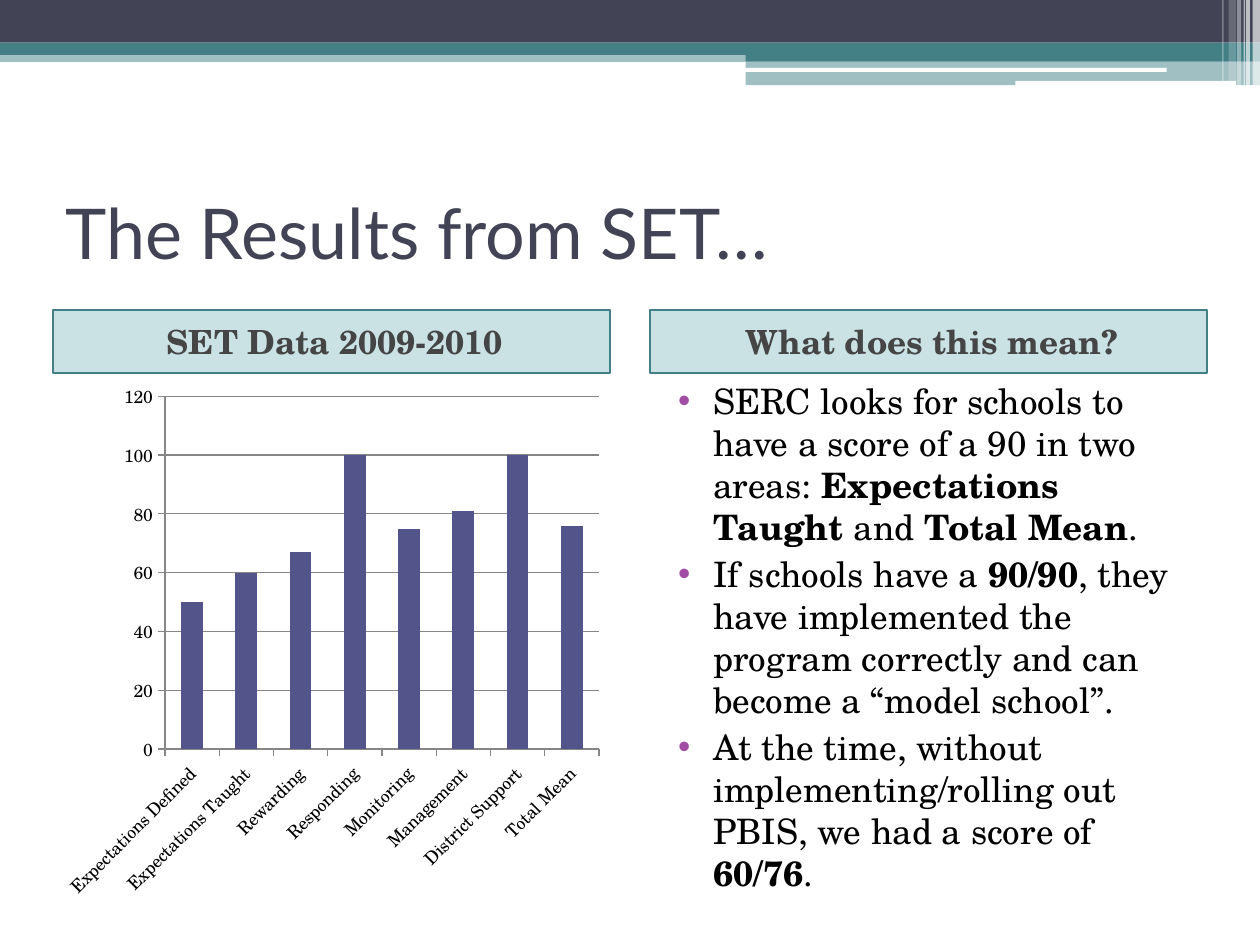
import pptx
import pptx.chart.data
import pptx.dml.color
import pptx.enum.chart
import pptx.enum.shapes
import pptx.enum.text
import pptx.oxml
import pptx.oxml.ns
import pptx.util
from dataclasses import dataclass

Cm = pptx.util.Cm
Pt = pptx.util.Pt
SHAPES = pptx.enum.shapes.MSO_SHAPE


@dataclass(frozen=True)
class Theme:
    navy: str = "424456"
    teal: str = "438086"
    panel: str = "328E97"
    heading: str = "454545"
    white: str = "FFFFFF"
    black: str = "000000"
    bullet: str = "A04DA3"
    bar: str = "53548A"
    grid: str = "868686"
    title_font: str = "Lato"
    body_font: str = "TeX Gyre Schola"
    title_size: int = 40
    heading_size: int = 19
    body_size: int = 20
    chart_size: int = 10


def rgb(color):
    return pptx.dml.color.RGBColor.from_string(color)


def set_font(font, name, size, color, bold=False):
    font.name, font.size, font.bold = name, Pt(size), bold
    font.color.rgb = rgb(color)


class SlideBuilder:
    def __init__(self, slide, theme):
        self.slide = slide
        self.theme = theme

    def block(self, box, color, opacity=100, kind=SHAPES.RECTANGLE, line=None):
        shape = self.slide.shapes.add_shape(kind, *map(Cm, box))
        shape.shadow.inherit = False
        shape.fill.solid()
        shape.fill.fore_color.rgb = rgb(color)
        if opacity < 100:
            color_element = shape.fill._xPr.find(".//" + pptx.oxml.ns.qn("a:srgbClr"))
            alpha = pptx.oxml.ns.qn("a:alpha")
            color_element.makeelement(alpha)
            color_element.append(color_element.makeelement(alpha, {"val": str(opacity * 1000)}))
        if line:
            shape.line.color.rgb = rgb(line)
            shape.line.width = Pt(1)
        else:
            shape.line.fill.background()
        return shape

    def text_frame(self, box, anchor):
        frame = self.slide.shapes.add_textbox(*map(Cm, box)).text_frame
        frame.word_wrap = True
        frame.vertical_anchor = anchor
        return frame

    def title(self, box, text):
        paragraph = self.text_frame(box, pptx.enum.text.MSO_ANCHOR.MIDDLE).paragraphs[0]
        paragraph.text = text
        set_font(paragraph.font, self.theme.title_font, self.theme.title_size, self.theme.navy)

    def heading(self, box, text):
        theme = self.theme
        shape = self.block(box, theme.panel, 25, line=theme.teal)
        paragraph = shape.text_frame.paragraphs[0]
        paragraph.text = text
        paragraph.alignment = pptx.enum.text.PP_ALIGN.CENTER
        paragraph.space_before = Pt(3)
        paragraph._p.get_or_add_pPr().set("marL", str(Cm(0.13)))
        set_font(paragraph.font, theme.body_font, theme.heading_size, theme.heading, True)

    def bullets(self, box, items):
        """Each item is a list of text pieces; every second piece is bold."""
        theme = self.theme
        frame = self.text_frame(box, pptx.enum.text.MSO_ANCHOR.TOP)
        for index, pieces in enumerate(items):
            paragraph = frame.add_paragraph() if index else frame.paragraphs[0]
            paragraph.space_before = Pt(3)
            set_font(paragraph.font, theme.body_font, theme.body_size, theme.black)
            for position, piece in enumerate(pieces):
                run = paragraph.add_run()
                run.text = piece
                run.font.bold = position % 2 == 1
            self.add_bullet(paragraph)

    def add_bullet(self, paragraph):
        properties = paragraph._p.get_or_add_pPr()
        properties.set("marL", str(Cm(1.02)))
        properties.set("indent", str(Cm(-0.71)))
        namespace = pptx.oxml.ns.nsdecls("a")
        marks = (
            f'<a:buClr {namespace}><a:srgbClr val="{self.theme.bullet}"/></a:buClr>',
            f'<a:buFont {namespace} typeface="Arial"/>',
            f'<a:buChar {namespace} char="•"/>',
        )
        position = list(properties).index(properties.find(pptx.oxml.ns.qn("a:spcBef"))) + 1
        for offset, mark in enumerate(marks):
            properties.insert(position + offset, pptx.oxml.parse_xml(mark))

    def column_chart(self, box, series_name, values):
        theme = self.theme
        chart_data = pptx.chart.data.CategoryChartData()
        chart_data.categories = list(values)
        chart_data.add_series(series_name, list(values.values()))
        kind = pptx.enum.chart.XL_CHART_TYPE.COLUMN_CLUSTERED
        chart = self.slide.shapes.add_chart(kind, *map(Cm, box), chart_data).chart
        chart.has_legend = False
        chart.has_title = False
        set_font(chart.font, theme.body_font, theme.chart_size, theme.black)

        plot = chart.plots[0]
        plot.gap_width = 150
        plot.vary_by_categories = False
        fill = plot.series[0].format.fill
        fill.solid()
        fill.fore_color.rgb = rgb(theme.bar)

        value_axis, category_axis = chart.value_axis, chart.category_axis
        value_axis.minimum_scale, value_axis.maximum_scale = 0, 120
        value_axis.major_unit = 20
        value_axis.has_major_gridlines = True
        for part in (value_axis, category_axis, value_axis.major_gridlines):
            part.format.line.color.rgb = rgb(theme.grid)
            part.format.line.width = Pt(0.75)
        for axis in (value_axis, category_axis):
            axis.major_tick_mark = pptx.enum.chart.XL_TICK_MARK.OUTSIDE
            set_font(axis.tick_labels.font, theme.body_font, theme.chart_size, theme.black)
        # Slanted category labels
        body = category_axis._element.find(".//" + pptx.oxml.ns.qn("a:bodyPr"))
        body.set("rot", str(-45 * 60000))
        body.set("vert", "horz")


def main():
    theme = Theme()
    presentation = pptx.Presentation()
    presentation.slide_width, presentation.slide_height = Cm(25.4), Cm(19.05)
    slide = presentation.slides.add_slide(presentation.slide_layouts[6])
    builder = SlideBuilder(slide, theme)

    # Header bands
    for box, color, opacity in (
        ((0, 1.02, 25.4, 0.23), theme.teal, 50),
        ((0, 0, 25.4, 0.86), theme.navy, 100),
        ((0, 0.86, 25.4, 0.25), theme.teal, 100),
        ((15.03, 0.99, 10.37, 0.24), theme.teal, 100),
        ((15.03, 1.23, 10.37, 0.49), theme.teal, 50),
    ):
        builder.block(box, color, opacity)
    for box in ((15.01, 1.37, 8.51, 0.08), (20.47, 1.63, 4.45, 0.1)):
        builder.block(box, theme.white, kind=SHAPES.ROUNDED_RECTANGLE)

    # Vertical stripes at the right edge
    for left, width, height, opacity in (
        (25.25, 0.15, 1.73, 65),
        (25.12, 0.08, 1.73, 65),
        (25.07, 0.03, 1.73, 60),
        (24.94, 0.08, 1.73, 40),
        (24.77, 0.15, 1.63, 20),
        (24.64, 0.03, 1.63, 30),
    ):
        builder.block((left, 0, width, height), theme.white, opacity)

    # Title and column headings
    left, right, width = 1.07, 13.11, 11.23
    builder.title((left, 3.18, 23.29, 2.97), "The Results from SET…")
    for column, text in ((left, "SET Data 2009-2010"), (right, "What does this mean?")):
        builder.heading((column, 6.25, width, 1.27), text)

    # Chart and explanation
    builder.column_chart((left, 7.52, width, 10.8), "Series 1", {
        "Expectations Defined": 50, "Expectations Taught": 60, "Rewarding": 67,
        "Responding": 100, "Monitoring": 75, "Management": 81,
        "District Support": 100, "Total Mean": 76,
    })
    builder.bullets((right, 7.52, width, 10.8), (
        ("SERC looks for schools to have a score of a 90 in two areas: ",
         "Expectations Taught ", "and ", "Total Mean", "."),
        ("If schools have a ", "90/90", ", they have implemented the program correctly "
         "and can become a “model school”."),
        ("At the time, without implementing/rolling out PBIS, we had a score of ",
         "60/76", "."),
    ))
    presentation.save("out.pptx")


if __name__ == "__main__":
    main()
